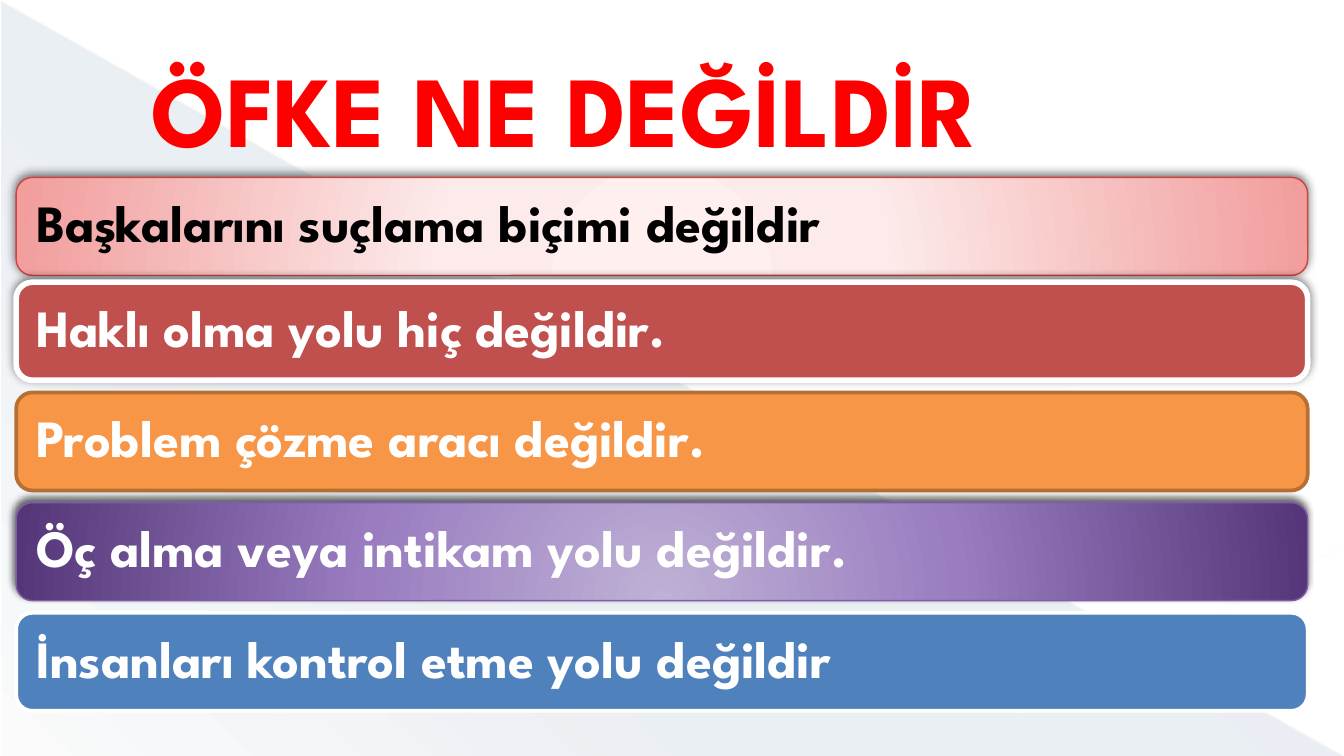
from lxml import etree
from pptx import Presentation
from pptx.dml.color import RGBColor
from pptx.enum.shapes import MSO_CONNECTOR, MSO_SHAPE
from pptx.enum.text import MSO_ANCHOR, PP_ALIGN
from pptx.oxml import parse_xml
from pptx.oxml.ns import nsdecls, qn
from pptx.util import Inches, Pt

STRAIGHT = MSO_CONNECTOR.STRAIGHT
TRIANGLE, ROUNDED = MSO_SHAPE.RIGHT_TRIANGLE, MSO_SHAPE.ROUNDED_RECTANGLE
MIDDLE, LEFT = MSO_ANCHOR.MIDDLE, PP_ALIGN.LEFT
FONT = "League Spartan"
RADIAL = '<a:path path="circle"><a:fillToRect l="50000" t="155000" r="50000" b="-55000"/></a:path>'
DIAGONAL = f'<a:lin ang="{133 * 60000}" scaled="0"/>'


def color(value):
    return RGBColor.from_string(value)


def set_gradient(shape, stops, direction):
    shape.fill.solid()
    marks = "".join(
        f'<a:gs pos="{place * 1000}"><a:srgbClr val="{value}">'
        f'<a:alpha val="{alpha * 1000}"/></a:srgbClr></a:gs>'
        for place, value, alpha in stops
    )
    gradient = parse_xml(
        f'<a:gradFill {nsdecls("a")} rotWithShape="1"><a:gsLst>{marks}</a:gsLst>{direction}</a:gradFill>'
    )
    properties = shape._element.spPr
    properties.replace(properties.find(qn("a:solidFill")), gradient)


deck = Presentation()
deck.slide_width = Inches(10)
deck.slide_height = deck.slide_width * 9 // 16
page = deck.slides.add_slide(deck.slide_layouts[5])
page.background.fill.solid()
page.background.fill.fore_color.rgb = color("FFFFFF")
title = page.shapes.title

triangle = page.shapes.add_shape(TRIANGLE, Inches(0.01), Inches(0.01), Inches(9.98), Inches(5.61))
triangle.shadow.inherit = False
triangle.line.fill.background()
set_gradient(triangle, [(0, "1F497D", 10), (70, "1F497D", 8), (100, "1F497D", 1)], DIAGONAL)
title._element.addprevious(triangle._element)

for x1, y1, x2, y2, value, width, alpha in [
    (0, 0.01, 9.99, 5.62, "F9F7EC", 0.39, 35),
    (10, 4.06, 7.07, 5.62, "FAF8EE", 0.47, 45),
]:
    line = page.shapes.add_connector(STRAIGHT, Inches(x1), Inches(y1), Inches(x2), Inches(y2))
    line.line.color.rgb = color(value)
    line.line.width = Pt(width)
    properties = line._element.spPr
    tint = next(properties.iter(qn("a:srgbClr")))
    etree.SubElement(tint, qn("a:alpha")).set("val", str(alpha * 1000))
    etree.SubElement(properties, qn("a:effectLst"))
    title._element.addprevious(line._element)

title.left, title.top = Inches(0.5), Inches(0.22)
title.width, title.height = Inches(9), Inches(1.15)
title.text_frame.vertical_anchor = MIDDLE
para = title.text_frame.paragraphs[0]
para.alignment = LEFT
para._p.get_or_add_pPr().set("marL", str(Inches(0.53)))
span = para.add_run()
span.text = "ÖFKE NE DEĞİLDİR"
span.font.name, span.font.size, span.font.bold = FONT, Pt(54), True
span.font.color.rgb = color("FF0000")

pink = [(0, "FFEFEF", 100), (34, "FDEBEB", 100), (100, "F19E9D", 100)]
purple = [(0, "BFB1D5", 100), (46, "997DC0", 100), (100, "553779", 100)]
soft, strong = (50, 5, 2), (60, 4, 3)
bars = [
    (1.32, "Başkalarını suçlama biçimi değildir", "000000", pink, "CC4542", 0.75, soft),
    (2.1, "Haklı olma yolu hiç değildir.", "FFFFFF", "C0504D", "FFFFFF", 3, soft),
    (2.92, "Problem çözme aracı değildir.", "FFFFFF", "F79646", "B76F34", 2, None),
    (3.74, "Öç alma veya intikam yolu değildir.", "FFFFFF", purple, "7F5EA8", 0.75, strong),
    (4.56, "İnsanları kontrol etme yolu değildir", "FFFFFF", "4F81BD", "FFFFFF", 2, None),
]
for top, text, ink, fill, border, width, shadow in bars:
    bar = page.shapes.add_shape(ROUNDED, Inches(0.12), Inches(top), Inches(9.61), Inches(0.73))
    if isinstance(fill, list):
        set_gradient(bar, fill, RADIAL)
    else:
        bar.fill.solid()
        bar.fill.fore_color.rgb = color(fill)
    bar.line.color.rgb = color(border)
    bar.line.width = Pt(width)
    bar.shadow.inherit = False
    if shadow:
        alpha, blur, distance = shadow
        bar._element.spPr.find(qn("a:effectLst")).append(parse_xml(
            f'<a:outerShdw {nsdecls("a")} blurRad="{Pt(blur)}" dist="{Pt(distance)}" '
            f'dir="{245 * 60000}" rotWithShape="0"><a:srgbClr val="000000">'
            f'<a:alpha val="{alpha * 1000}"/></a:srgbClr></a:outerShdw>'
        ))

    box = page.shapes.add_textbox(Inches(0.15), Inches(top + 0.03), Inches(9.54), Inches(0.66))
    frame = box.text_frame
    frame.word_wrap = True
    frame.vertical_anchor = MIDDLE
    frame.margin_left = frame.margin_right = Inches(0.12)
    frame.margin_top = frame.margin_bottom = Inches(0.12)
    para = frame.paragraphs[0]
    para.alignment = LEFT
    para.line_spacing = 0.9
    span = para.add_run()
    span.text = text
    span.font.name, span.font.size, span.font.bold = FONT, Pt(28), True
    span.font.color.rgb = color(ink)
    span._r.get_or_add_rPr().set("kern", "1200")

deck.save("out.pptx")
